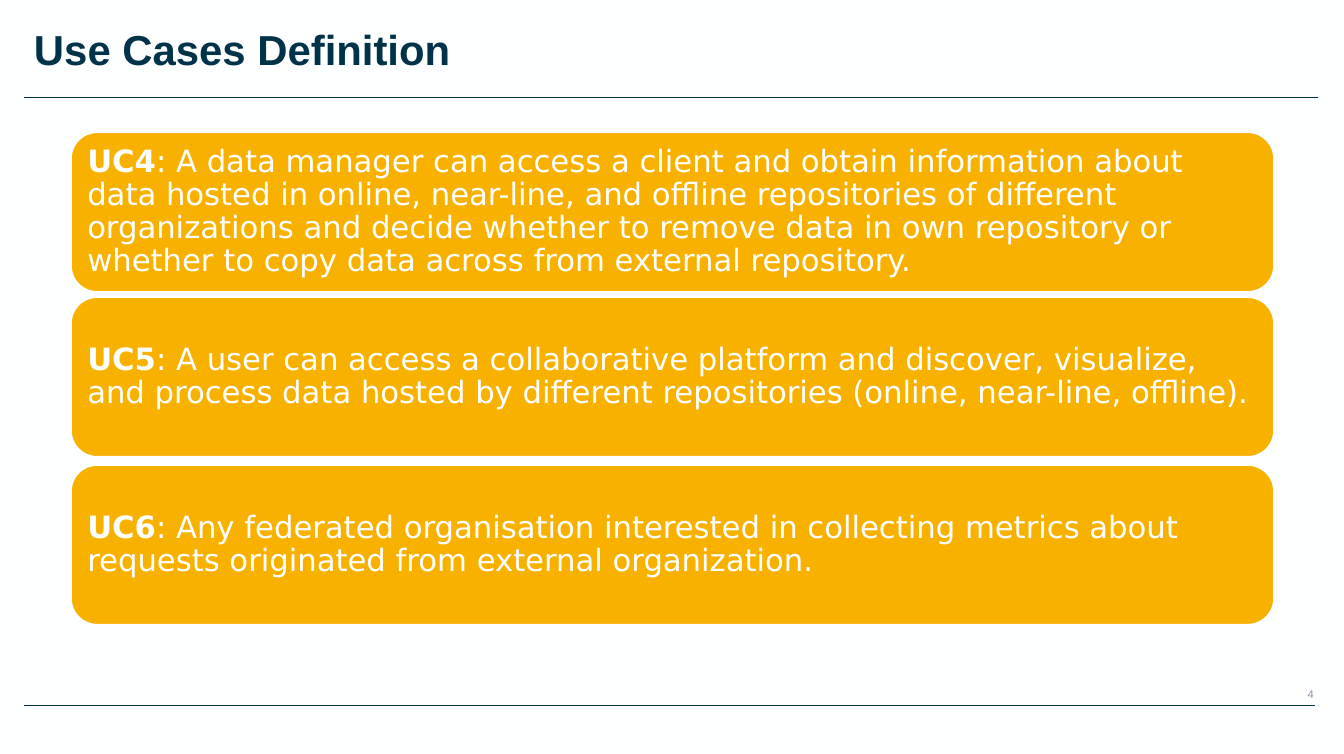
from lxml import etree
from pptx import Presentation
from pptx import util as u
from pptx.dml.color import RGBColor
from pptx.enum import shapes, text
from pptx.oxml.ns import qn

COLORS = {"paper": "FEFFFF", "navy": "003249", "gold": "F9B100", "gray": "8197A6"}

CASES = [
    (1.31, "UC4", ": A data manager can access a client and obtain information about "
     "data hosted in online, near-line, and offline repositories of different "
     "organizations and decide whether to remove data in own repository or "
     "whether to copy data across from external repository."),
    (2.95, "UC5", ": A user can access a collaborative platform and discover, "
     "visualize, and process data hosted by different repositories "
     "(online, near-line, offline)."),
    (4.62, "UC6", ": Any federated organisation interested in collecting metrics "
     "about requests originated from external organization."),
]


class Deck:
    def __init__(self, slide):
        self.slide = slide
        self.head = "Arial"
        self.body = "DejaVu Sans"
        fill = slide.background.fill
        fill.solid()
        fill.fore_color.rgb = self.color("paper")

    def color(self, name):
        return RGBColor.from_string(COLORS[name])

    def style(self, run, font, size, color, bold=False):
        run.font.name = font
        run.font.size = u.Pt(size)
        run.font.bold = bold
        run.font.color.rgb = self.color(color)

    def rule(self, top, right):
        line = self.slide.shapes.add_connector(
            shapes.MSO_CONNECTOR.STRAIGHT,
            u.Inches(0.24), u.Inches(top), u.Inches(right), u.Inches(top))
        line.line.color.rgb = self.color("navy")
        line.line.width = u.Pt(0.75)
        etree.SubElement(line._element.spPr, qn("a:effectLst"))

    def label(self, words, place, size, color, align, bold=False, right=0.1):
        box = self.slide.shapes.add_textbox(*map(u.Inches, place))
        frame = box.text_frame
        frame.word_wrap = True
        frame.vertical_anchor = text.MSO_ANCHOR.MIDDLE
        frame.margin_right = u.Inches(right)
        frame.text = words
        para = frame.paragraphs[0]
        para.alignment = align
        self.style(para.runs[0], self.head, size, color, bold)

    def card(self, top, code, words):
        card = self.slide.shapes.add_shape(
            shapes.MSO_SHAPE.ROUNDED_RECTANGLE,
            u.Inches(0.7), u.Inches(top), u.Inches(11.98), u.Inches(1.6))
        card.shadow.inherit = False
        card.fill.solid()
        card.fill.fore_color.rgb = self.color("gold")
        card.line.color.rgb = self.color("paper")
        card.line.width = u.Pt(2)
        frame = card.text_frame
        frame.word_wrap = True
        frame.vertical_anchor = text.MSO_ANCHOR.MIDDLE
        frame.margin_left = frame.margin_right = u.Inches(0.09)
        frame.margin_top = frame.margin_bottom = u.Inches(0.09)
        frame.text = code
        para = frame.paragraphs[0]
        para.alignment = text.PP_ALIGN.LEFT
        para.line_spacing = 0.9
        para.add_run().text = words
        for run, bold in zip(para.runs, (True, False)):
            self.style(run, self.body, 22, "paper", bold)


def main():
    prs = Presentation()
    prs.slide_width = u.Inches(13.37)
    prs.slide_height = u.Inches(7.5)
    deck = Deck(prs.slides.add_slide(prs.slide_layouts[6]))
    deck.label("4", (8.97, 6.78, 4.1, 0.24), 8, "gray",
               text.PP_ALIGN.RIGHT, right=0)
    deck.rule(7.02, 13.08)
    deck.rule(0.97, 13.11)
    deck.label("Use Cases Definition", (0.24, 0.17, 11.06, 0.62), 30, "navy",
               text.PP_ALIGN.LEFT, bold=True)
    for case in CASES:
        deck.card(*case)
    prs.save("out.pptx")


if __name__ == "__main__":
    main()
